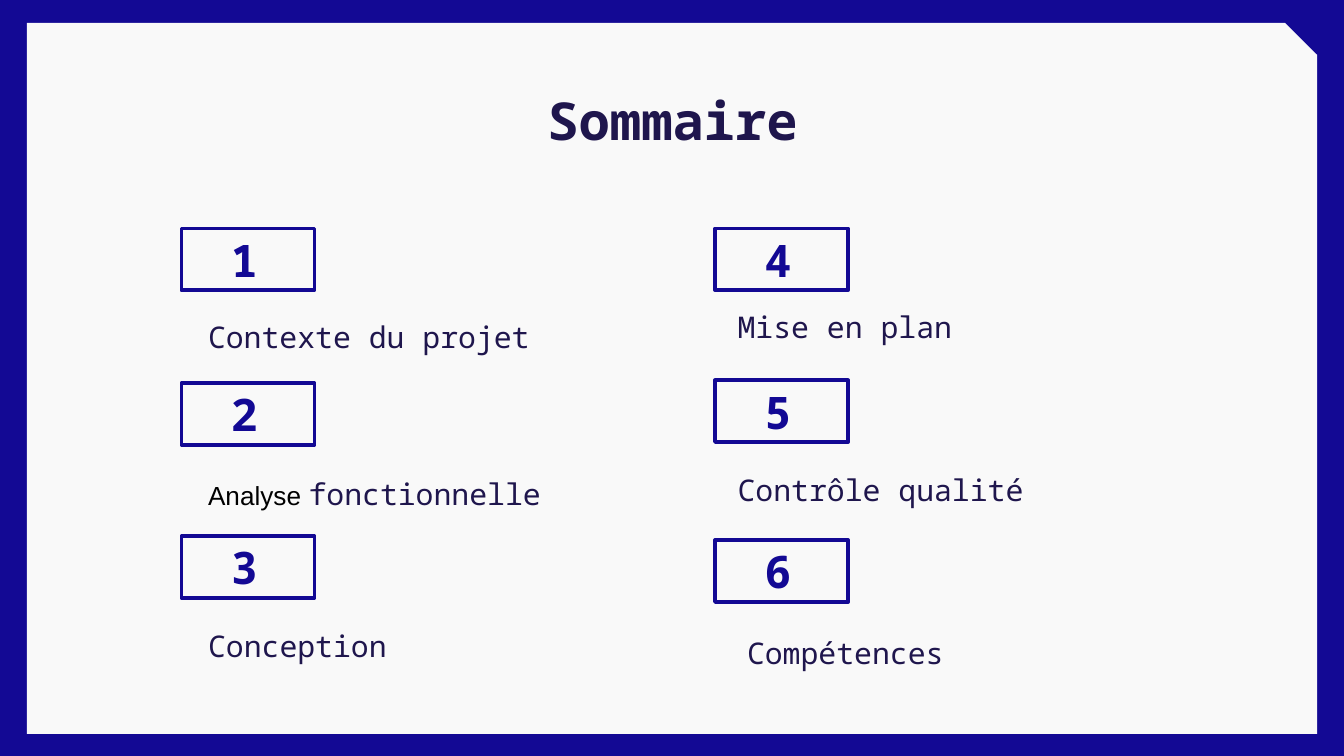
from dataclasses import dataclass

from lxml.etree import SubElement
from pptx import Presentation
from pptx.dml.color import RGBColor as RGB
from pptx.enum.shapes import MSO_SHAPE as Shape
from pptx.enum.text import MSO_ANCHOR as Anchor
from pptx.enum.text import MSO_AUTO_SIZE as AutoSize
from pptx.enum.text import PP_ALIGN as Align
from pptx.oxml.ns import qn
from pptx.util import Inches, Pt


@dataclass(frozen=True)
class Theme:
    blue: RGB = RGB(0x13, 0x09, 0x94)
    paper: RGB = RGB(0xF9, 0xF9, 0xF9)
    ink: RGB = RGB(0x1F, 0x16, 0x4D)
    black: RGB = RGB(0, 0, 0)
    mono: str = "Noto Sans Mono"
    sans: str = "Arial"
    title: int = 28
    number: int = 24
    label: int = 16
    small: int = 14


@dataclass(frozen=True)
class Chapter:
    number: int
    text: str
    left: float
    top: float
    label_left: float
    label_top: float
    label_width: float = 2.52
    lead: str = ""  # opening words set in the small sans face
    spacing: float = 1.0


THEME = Theme()
LEFT, RIGHT = 1.35, 5.32
LABEL_LEFT, LABEL_RIGHT = 1.45, 5.39

CHAPTERS = [
    Chapter(1, "Contexte du projet", LEFT, 1.7, LABEL_LEFT, 2.28, 3.23, spacing=1.15),
    Chapter(2, "fonctionnelle", LEFT, 2.85, LABEL_LEFT, 3.49, 3.06, lead="Analyse "),
    Chapter(3, "Conception", LEFT, 3.99, LABEL_LEFT, 4.62),
    Chapter(4, "Mise en plan", RIGHT, 1.7, LABEL_RIGHT, 2.25),
    Chapter(5, "Contrôle qualité", RIGHT, 2.83, LABEL_RIGHT, 3.46),
    Chapter(6, "Compétences", RIGHT, 4.02, 5.46, 4.67),
]


def add_text(p, text: str, *, size: int = THEME.label, font: str = THEME.mono,
             color: RGB = THEME.ink, bold: bool = False) -> None:
    """Append one formatted run to a paragraph."""
    r = p.add_run()
    r.text = text
    r.font.size = Pt(size)
    r.font.name = font
    r.font.bold = bold
    r.font.color.rgb = color


def add_box(shapes, left: float, top: float, width: float, height: float):
    """Add a wrapping text box and return its first paragraph."""
    sp = shapes.add_textbox(Inches(left), Inches(top), Inches(width), Inches(height))
    tf = sp.text_frame
    tf.word_wrap = True
    tf.auto_size = AutoSize.SHAPE_TO_FIT_TEXT
    return tf.paragraphs[0]


def add_panel(slide) -> None:
    """Lay the light panel with its cut corner behind everything else."""
    sp = slide.shapes.add_shape(Shape.SNIP_1_RECTANGLE, Inches(0.2), Inches(0.17),
                                Inches(9.6), Inches(5.29))
    sp.adjustments[0] = 0.045
    sp.shadow.inherit = False
    sp.fill.solid()
    sp.fill.fore_color.rgb = THEME.paper
    sp.line.fill.background()
    slide.shapes._spTree.insert(2, sp._element)


def add_title(slide, text: str) -> None:
    sp = slide.shapes.title
    sp.left, sp.top = Inches(0.79), Inches(0.49)
    sp.width, sp.height = Inches(8.43), Inches(0.63)
    tf = sp.text_frame
    tf.margin_left = tf.margin_right = tf.margin_top = tf.margin_bottom = Inches(0.1)
    tf.vertical_anchor = Anchor.TOP
    tf.auto_size = AutoSize.NONE
    p = tf.paragraphs[0]
    p.alignment = Align.CENTER
    p.line_spacing = 1.15
    add_text(p, text, size=THEME.title, bold=True)


def add_chapter(slide, chapter: Chapter) -> None:
    # Number in its frame
    shapes = slide.shapes.add_group_shape().shapes
    sp = shapes.add_shape(Shape.RECTANGLE, Inches(chapter.left), Inches(chapter.top),
                          Inches(0.99), Inches(0.46))
    sp.shadow.inherit = False
    sp.fill.background()
    sp.line.color.rgb = THEME.blue
    sp.line.width = Pt(2)
    SubElement(sp.line._get_or_add_ln(), qn("a:round"))
    p = add_box(shapes, chapter.left + 0.27, chapter.top - 0.02, 0.78, 0.5)
    add_text(p, str(chapter.number), size=THEME.number, color=THEME.blue, bold=True)

    # Label below
    p = add_box(slide.shapes, chapter.label_left, chapter.label_top,
                chapter.label_width, 0.37)
    p.line_spacing = chapter.spacing
    if chapter.lead:
        add_text(p, chapter.lead, size=THEME.small, font=THEME.sans, color=THEME.black)
    add_text(p, chapter.text)


def main() -> None:
    # Widescreen page, 16:9
    prs = Presentation()
    prs.slide_width = Inches(10)
    prs.slide_height = Inches(10 * 9 / 16)
    slide = prs.slides.add_slide(prs.slide_layouts[5])  # title only
    slide.background.fill.solid()
    slide.background.fill.fore_color.rgb = THEME.blue

    add_panel(slide)
    add_title(slide, "Sommaire")
    for chapter in CHAPTERS:
        add_chapter(slide, chapter)

    prs.save("out.pptx")


if __name__ == "__main__":
    main()
